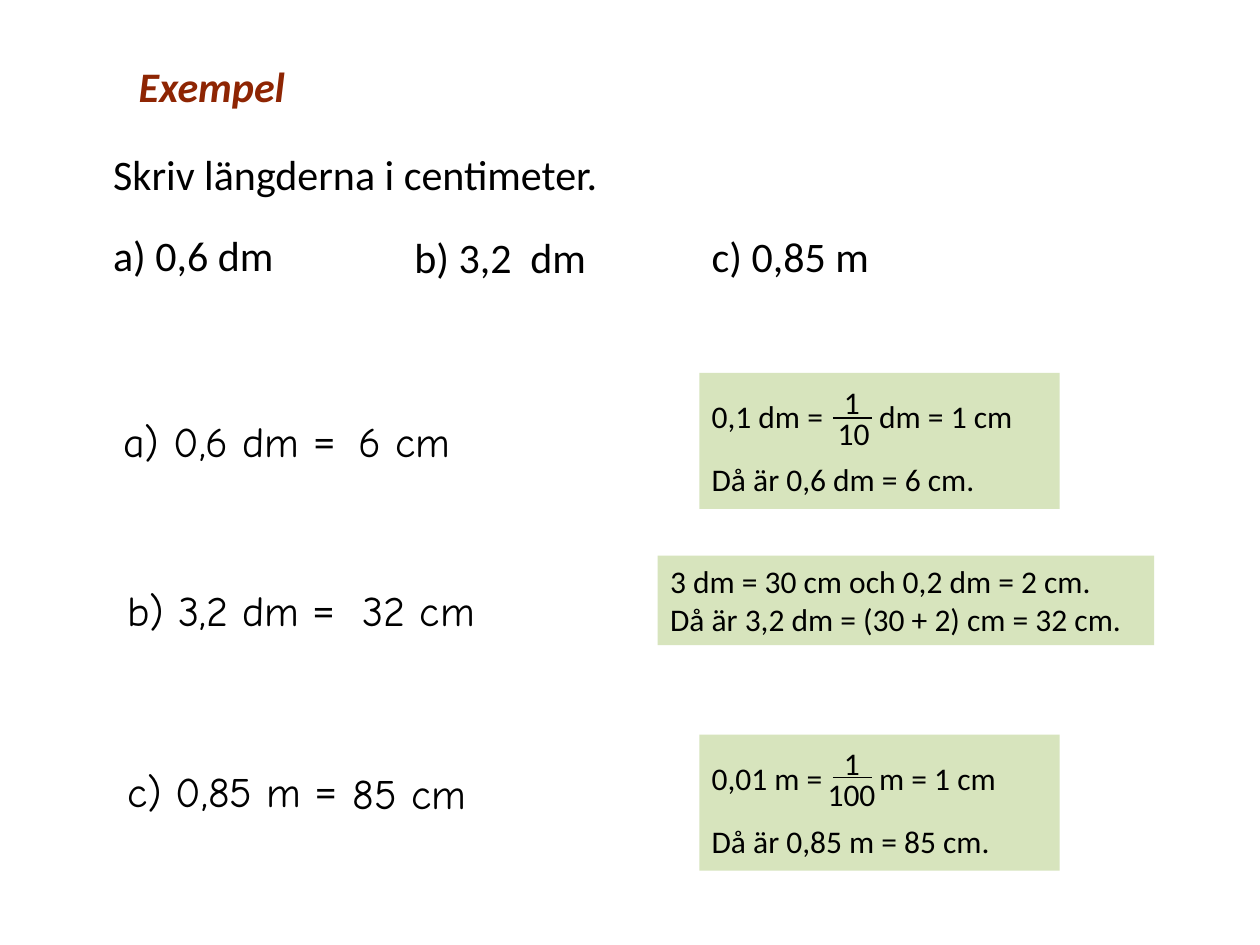
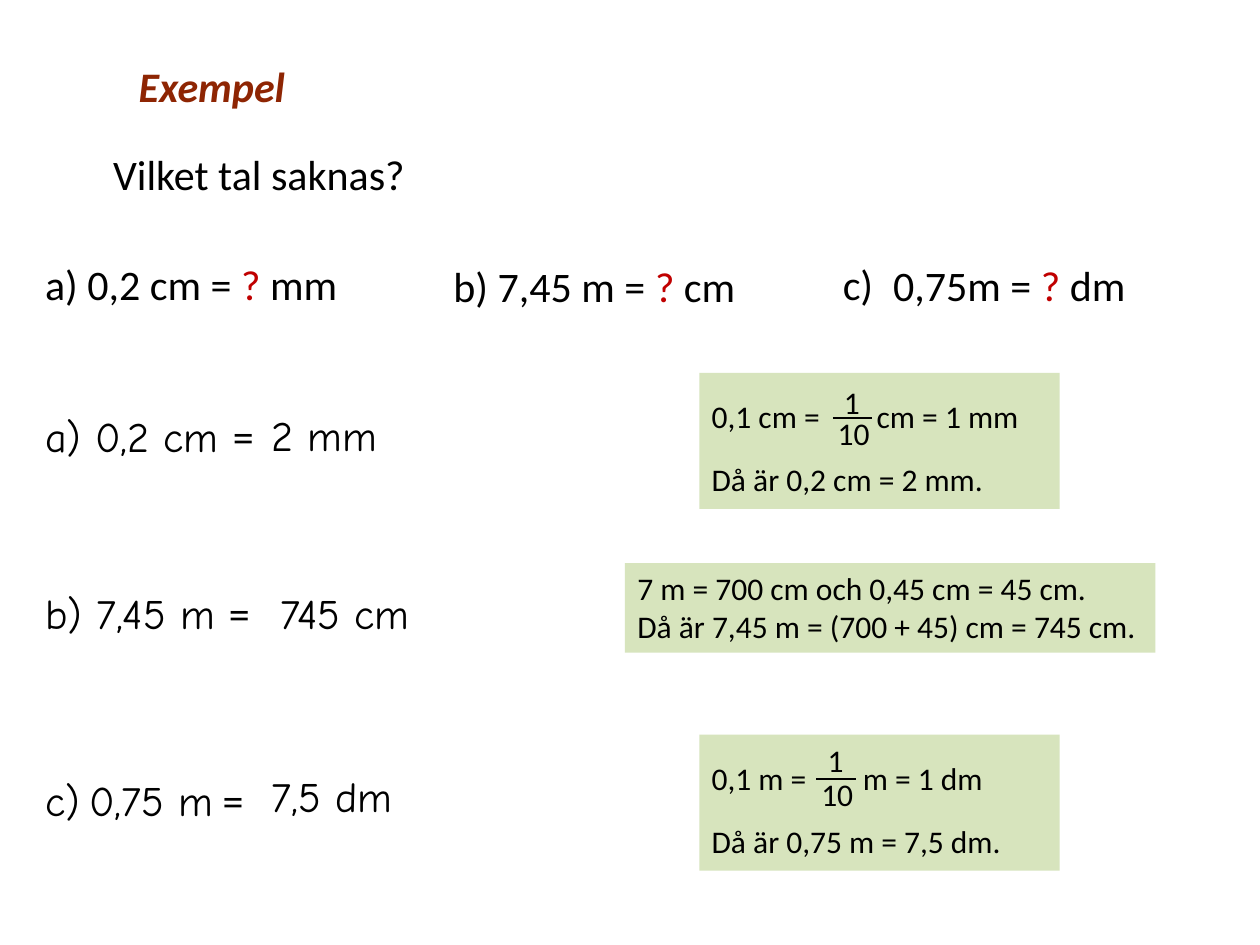
from lxml import etree
from pptx import Presentation
from pptx.dml.color import RGBColor
from pptx.enum.shapes import MSO_CONNECTOR, MSO_SHAPE
from pptx.enum.text import MSO_ANCHOR, MSO_AUTO_SIZE, PP_ALIGN
from pptx.oxml.ns import qn
from pptx.util import Inches, Pt

BLACK = RGBColor(0x00, 0x00, 0x00)
BROWN = RGBColor(0x8E, 0x25, 0x03)
RED = RGBColor(0xC0, 0x00, 0x00)
GREEN = RGBColor(0xD7, 0xE4, 0xBD)
LEFT, TOP = PP_ALIGN.LEFT, MSO_ANCHOR.TOP
NO_FIT = MSO_AUTO_SIZE.NONE
RECTANGLE, STRAIGHT = MSO_SHAPE.RECTANGLE, MSO_CONNECTOR.STRAIGHT

# Font formats; in the text, pieces between bars take the accent format
PRINT = {"name": "Calibri", "size": Pt(24), "color": BLACK}
HAND = {**PRINT, "name": "Comic Neue"}
UNKNOWN = {**PRINT, "color": RED}
SMALL = {**PRINT, "size": Pt(18)}
HEADING = {**PRINT, "color": BROWN, "bold": True, "italic": True}


def write(shape, lines, style, accent=PRINT, tab=None, gap=0, top_inset=0.05):
    frame = shape.text_frame
    frame.word_wrap = True
    frame.auto_size = NO_FIT
    frame.vertical_anchor = TOP
    frame.margin_top = Inches(top_inset)
    for number, line in enumerate(lines):
        paragraph = frame.add_paragraph() if number else frame.paragraphs[0]
        paragraph.alignment = LEFT
        if number and gap:
            paragraph.space_before = Pt(gap)
        if tab and "\t" in line:
            stops = etree.SubElement(paragraph._p.get_or_add_pPr(), qn("a:tabLst"))
            etree.SubElement(stops, qn("a:tab"), pos=str(Inches(tab)), algn="l")
        for index, piece in enumerate(line.split("|")):
            if not piece:
                continue
            run = paragraph.add_run()
            run.text = piece
            for attribute, value in (accent if index % 2 else style).items():
                if attribute == "color":
                    run.font.color.rgb = value
                else:
                    setattr(run.font, attribute, value)


def add_text(slide, left, top, width, height, text, style, **options):
    box = slide.shapes.add_textbox(*map(Inches, (left, top, width, height)))
    write(box, [text], style, **options)


# Tasks and answers: left, top, width, text
# Fraction notes: top, lines, tab, numerator (left, top),
# denominator (left, top, text), height of the fraction bar
# Sum notes: left, top, width, lines
examples = [
    {
        "question": "Skriv längderna i centimeter.",
        "tasks": [
            (0.8, 1.77, 2.3, "a) 0,6 dm"),
            (3.19, 1.79, 1.61, "b) 3,2\tdm"),
            (5.55, 1.78, 2.71, "c) 0,85 m"),
        ],
        "answers": [
            (0.88, 3.25, 1.99, "a) 0,6 dm |=|"),
            (2.75, 3.25, 1.39, "6 cm"),
            (0.91, 4.59, 1.99, "b) 3,2 dm |=|"),
            (2.78, 4.59, 1.39, "32 cm"),
            (0.91, 6.03, 2.51, "c) 0,85 m |=|"),
            (2.7, 6.04, 1.39, "85 cm"),
        ],
        "fraction_notes": [
            (2.96, ["0,1 dm =\tdm = 1 cm", "Då är 0,6 dm = 6 cm."], 1.33,
             (6.6, 2.99), (6.55, 3.24, "10"), 3.32),
            (5.83, ["0,01 m =\tm = 1 cm", "Då är 0,85 m = 85 cm."], 1.33,
             (6.6, 5.86), (6.47, 6.1, "100"), 6.17),
        ],
        "sum_note": (5.22, 4.41, 3.94, ["3 dm = 30 cm och 0,2 dm = 2 cm.",
                                        "Då är 3,2 dm = (30 + 2) cm = 32 cm."]),
    },
    {
        "question": "Vilket tal saknas?",
        "tasks": [
            (0.26, 2, 3.15, "a) 0,2 cm = |?| mm"),
            (3.5, 2.02, 3.15, "b) 7,45 m = |?| cm"),
            (6.59, 2, 0.51, "c)"),
            (6.99, 2.01, 2.51, "0,75m = |?| dm"),
        ],
        "answers": [
            (0.26, 3.21, 2.56, "a) 0,2 cm |=|"),
            (2.06, 3.2, 1.39, "2 mm"),
            (0.26, 4.61, 2.75, "b) 7,45 m |=|"),
            (2.13, 4.61, 1.39, "745 cm"),
            (0.26, 6.1, 0.51, "c)"),
            (0.61, 6.1, 1.55, "0,75 m| =|"),
            (2.06, 6.07, 1.39, "7,5 dm"),
        ],
        "fraction_notes": [
            (2.96, ["0,1 cm =\tcm = 1 mm", "Då är 0,2 cm = 2 mm."], 1.31,
             (6.6, 2.99), (6.55, 3.24, "10"), 3.32),
            (5.83, ["0,1 m =\tm = 1 dm", "Då är 0,75 m = 7,5 dm."], 1.2,
             (6.47, 5.83), (6.42, 6.1, "10"), 6.18),
        ],
        "sum_note": (4.96, 4.47, 4.21, ["7 m = 700 cm och 0,45 cm = 45 cm.",
                                        "Då är 7,45 m = (700 + 45) cm = 745 cm."]),
    },
]

presentation = Presentation()
presentation.slide_width, presentation.slide_height = Inches(10), Inches(7.5)
title_only = presentation.slide_layouts[5]

for example in examples:
    slide = presentation.slides.add_slide(title_only)

    # Heading and question
    heading = slide.shapes.title
    heading.left, heading.top = Inches(1), Inches(0.43)
    heading.width, heading.height = Inches(1.5), Inches(0.5)
    write(heading, ["Exempel"], HEADING)
    add_text(slide, 0.8, 1.13, 5.24, 0.5, example["question"], PRINT)

    # Tasks and handwritten answers
    for left, top, width, text in example["tasks"]:
        add_text(slide, left, top, width, 0.5, text, PRINT, accent=UNKNOWN, tab=0.92)
    for left, top, width, text in example["answers"]:
        add_text(slide, left, top, width, 0.5, text, HAND)

    # Green notes
    left, top, width, lines = example["sum_note"]
    notes = [(left, top, width, 0.71, lines, {})]
    for top, lines, tab, *_ in example["fraction_notes"]:
        notes.append((5.55, top, 2.86, 1.08, lines,
                      {"tab": tab, "gap": 14.6, "top_inset": 0.19}))
    for left, top, width, height, lines, options in notes:
        note = slide.shapes.add_shape(RECTANGLE, *map(Inches, (left, top, width, height)))
        note.shadow.inherit = False
        note.fill.solid()
        note.fill.fore_color.rgb = GREEN
        note.line.fill.background()
        write(note, lines, SMALL, **options)

    # Fractions inside the notes
    for *_, numerator, denominator, bar_top in example["fraction_notes"]:
        add_text(slide, *numerator, 0.37, 0.4, "1", SMALL)
        left, top, number = denominator
        add_text(slide, left, top, 0.6, 0.4, number, SMALL)
        bar_left = numerator[0] + 0.01
        bar = slide.shapes.add_connector(
            STRAIGHT, *map(Inches, (bar_left, bar_top, bar_left + 0.31, bar_top)))
        bar.line.color.rgb = BLACK
        bar.line.width = Pt(1)
        etree.SubElement(bar._element.spPr, qn("a:effectLst"))

presentation.save("out.pptx")
